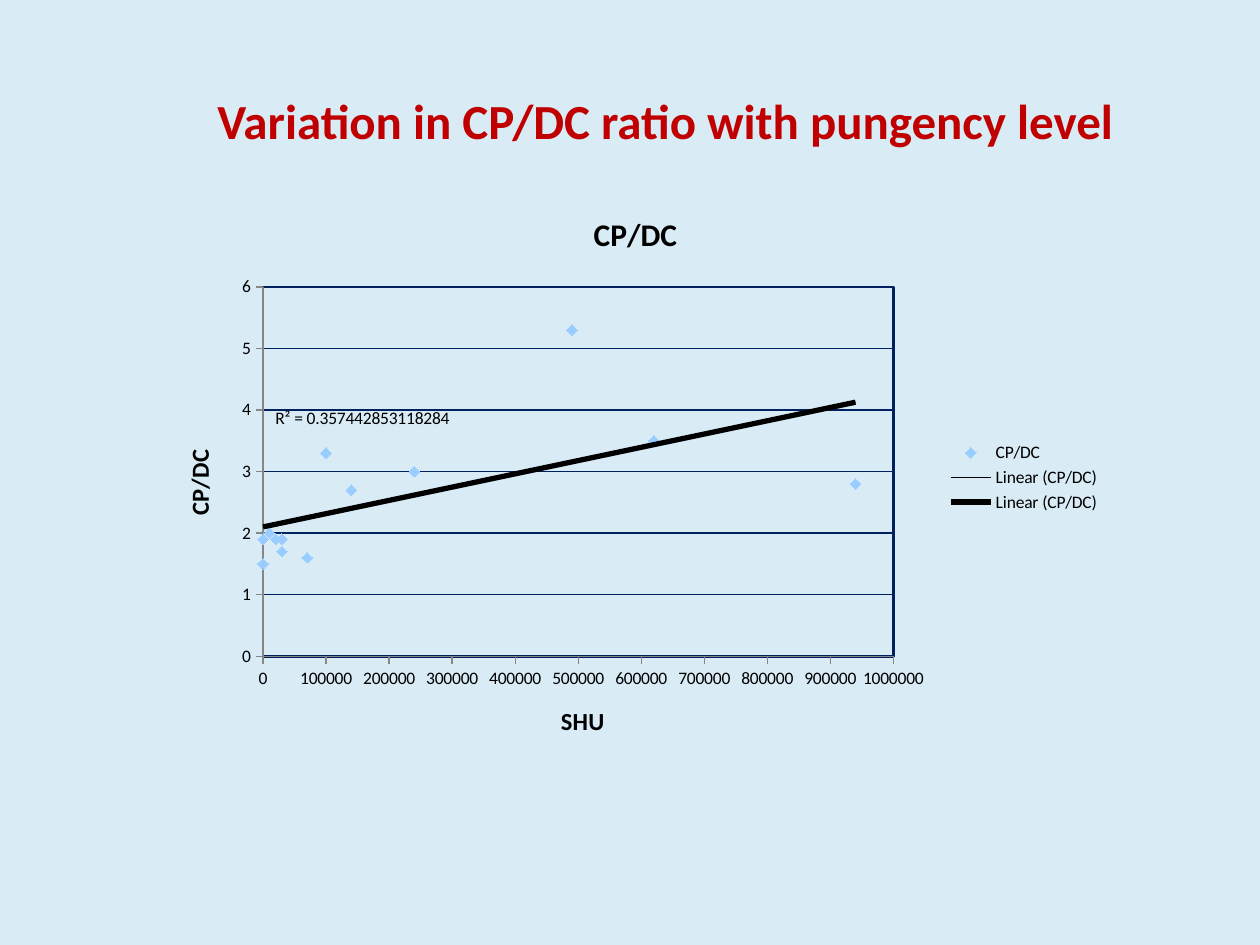
from lxml import etree
from pptx import Presentation
from pptx import util as u
from pptx.chart.data import XyChartData
from pptx.dml.color import RGBColor
from pptx.enum import chart as ch, text
from pptx.oxml import parse_xml
from pptx.oxml.ns import nsdecls, qn

COLORS = {"background": "D9EBF5", "heading": "C00000", "ink": "000000",
          "grid": "002060", "axis": "868686", "point": "99CCFF"}
FONT = "Calibri"
SCALE = 914400 / 126  # EMU per px

SHU = [0, 30000, 20000, 70000, 0, 10000, 30000, 940000, 490000,
       100000, 140000, 620000, 240000]
RATIO = [1.9, 1.9, 1.9, 1.6, 1.5, 2, 1.7, 2.8, 5.3, 3.3, 2.7, 3.5, 3]


def rgb(name):
    return RGBColor.from_string(COLORS[name])


def layout_xml(target="", **fractions):
    modes = "".join(f'<c:{k}Mode val="edge"/>' for k in "xy")
    places = "".join(f'<c:{k} val="{v}"/>' for k, v in fractions.items())
    return f"<c:layout><c:manualLayout>{target}{modes}{places}</c:manualLayout></c:layout>"


class SlideBuilder:
    def __init__(self, deck):
        self.slide = deck.slides.add_slide(deck.slide_layouts[5])
        fill = self.slide.background.fill
        fill.solid()
        fill.fore_color.rgb = rgb("background")

    def box(self, *px):
        return [u.Emu(round(n * SCALE)) for n in px]

    def style(self, font, size, color="ink", bold=False):
        font.name, font.size, font.bold = FONT, u.Pt(size), bold
        font.color.rgb = rgb(color)

    def line(self, line, color, width):
        line.color.rgb = rgb(color)
        line.width = u.Pt(width)

    def caption(self, frame, words, size, color="ink"):
        paragraph = frame.paragraphs[0]
        run = paragraph.add_run()
        run.text = words
        self.style(run.font, size, color, bold=True)
        return paragraph

    def heading(self, words, *px):
        title = self.slide.shapes.title
        title.left, title.top, title.width, title.height = self.box(*px)
        frame = title.text_frame
        frame.word_wrap = False
        frame.auto_size = text.MSO_AUTO_SIZE.NONE
        frame.vertical_anchor = text.MSO_ANCHOR.MIDDLE
        self.caption(frame, words, 28, "heading").alignment = text.PP_ALIGN.CENTER

    def axis(self, axis, words, top, step):
        axis.minimum_scale, axis.maximum_scale, axis.major_unit = 0, top, step
        axis.major_tick_mark = ch.XL_TICK_MARK.OUTSIDE
        axis.minor_tick_mark = ch.XL_TICK_MARK.NONE
        axis.tick_label_position = ch.XL_TICK_LABEL_POSITION.NEXT_TO_AXIS
        self.line(axis.format.line, "axis", 0.75)
        self.caption(axis.axis_title.text_frame, words, 14)

    def trendline(self, series, width, label=""):
        series._element.find(qn("c:xVal")).addprevious(parse_xml(
            f'<c:trendline {nsdecls("c", "a")}><c:spPr><a:ln w="{u.Pt(width)}"><a:solidFill>'
            f'<a:srgbClr val="{COLORS["ink"]}"/></a:solidFill></a:ln></c:spPr>'
            f'<c:trendlineType val="linear"/><c:dispRSqr val="{int(bool(label))}"/>'
            f'<c:dispEq val="0"/>{label}</c:trendline>'))

    def scatter(self, name, xs, ys, *px):
        data = XyChartData()
        points = data.add_series(name)
        for x, y in zip(xs, ys):
            points.add_data_point(x, y)
        chart = self.slide.shapes.add_chart(
            ch.XL_CHART_TYPE.XY_SCATTER, *self.box(*px), data).chart
        self.style(chart.font, 10)
        chart.has_title = True
        self.caption(chart.chart_title.text_frame, name, 18)
        chart.has_legend = True
        chart.legend.position = ch.XL_LEGEND_POSITION.RIGHT
        chart.legend.include_in_layout = False
        self.style(chart.legend.font, 10)

        series = chart.plots[0].series[0]
        chart.plots[0].vary_by_categories = False
        series.smooth = False
        series.format.line.fill.background()
        series.marker.style = ch.XL_MARKER_STYLE.DIAMOND
        series.marker.size = 6
        series.marker.format.fill.solid()
        series.marker.format.fill.fore_color.rgb = rgb("point")
        series.marker.format.line.fill.background()
        return chart, series

    def plot_area(self, chart, **fractions):
        area = chart._chartSpace.chart.plotArea
        for old in area.findall(qn("c:layout")):
            area.remove(old)
        frame = etree.fromstring(
            f'<c:plotArea {nsdecls("c", "a")}>'
            + layout_xml('<c:layoutTarget val="inner"/>', **fractions)
            + f'<c:spPr><a:noFill/><a:ln w="{u.Pt(1.5)}"><a:solidFill>'
            f'<a:srgbClr val="{COLORS["grid"]}"/></a:solidFill></a:ln></c:spPr></c:plotArea>')
        layout, border = frame
        area.insert(0, layout)
        area.append(border)


def main():
    deck = Presentation()
    deck.slide_width, deck.slide_height = u.Inches(10), u.Inches(7.5)
    page = SlideBuilder(deck)

    # Heading
    page.heading("Variation in CP/DC ratio with pungency level", 199, 84, 932, 72)

    # Ratio against pungency
    chart, ratio = page.scatter("CP/DC", SHU, RATIO, 158, 189, 955, 577)
    page.plot_area(chart, x=0.11, y=0.17, w=0.66, h=0.64)
    page.axis(chart.category_axis, "SHU", 1000000, 100000)
    page.axis(chart.value_axis, "CP/DC", 6, 1)
    chart.category_axis.has_major_gridlines = False
    chart.value_axis.has_major_gridlines = True
    page.line(chart.value_axis.major_gridlines.format.line, "grid", 0.75)

    # Thin and bold linear trends, the bold one with its R²
    r_squared = ("<c:trendlineLbl>" + layout_xml(x=0.13, y=0.38)
                 + '<c:numFmt formatCode="General" sourceLinked="0"/></c:trendlineLbl>')
    page.trendline(ratio, 0.75)
    page.trendline(ratio, 3, r_squared)

    deck.save("out.pptx")


if __name__ == "__main__":
    main()
